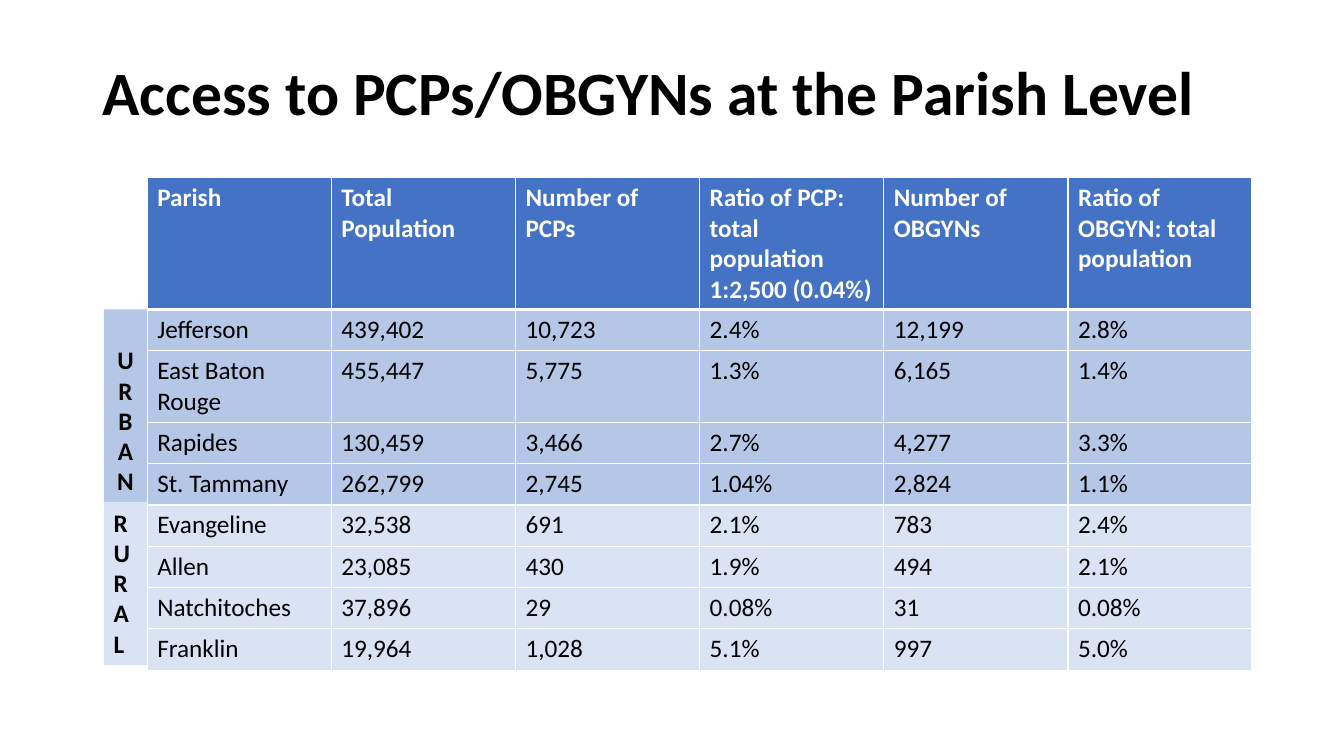
"""Build the slide on access to PCPs and OBGYNs by parish."""
import lxml.etree
import pptx
import pptx.dml.color
import pptx.enum.shapes
import pptx.enum.text
import pptx.oxml.ns
import pptx.util

Inches = pptx.util.Inches
Pt = pptx.util.Pt
URBAN, RURAL, HEADER = "B4C7E7", "DAE3F3", "4472C4"


def color(value):
    return pptx.dml.color.RGBColor.from_string(value)


def set_font(paragraph, size, value, bold):
    font = paragraph.font
    font.name = "Calibri"
    font.size = Pt(size)
    font.bold = bold
    font.color.rgb = color(value)


presentation = pptx.Presentation()
presentation.slide_width = Inches(13.33)
presentation.slide_height = Inches(7.5)
slide = presentation.slides.add_slide(presentation.slide_layouts[6])

title = slide.shapes.add_textbox(Inches(0.92), Inches(0.4), Inches(11.5), Inches(1.09))
title.text_frame.word_wrap = True
title.text_frame.vertical_anchor = pptx.enum.text.MSO_ANCHOR.MIDDLE
paragraph = title.text_frame.paragraphs[0]
paragraph.text = "Access to PCPs/OBGYNs at the Parish Level"
paragraph.line_spacing = 0.9
set_font(paragraph, 44, "000000", True)

rows = [
    ("Parish", "Total Population", "Number of PCPs",
     "Ratio of PCP: total population 1:2,500 (0.04%)",
     "Number of OBGYNs", "Ratio of OBGYN: total population"),
    ("Jefferson", "439,402", "10,723", "2.4%", "12,199", "2.8%"),
    ("East Baton Rouge", "455,447", "5,775", "1.3%", "6,165", "1.4%"),
    ("Rapides", "130,459", "3,466", "2.7%", "4,277", "3.3%"),
    ("St. Tammany", "262,799", "2,745", "1.04%", "2,824", "1.1%"),
    ("Evangeline", "32,538", "691", "2.1%", "783", "2.4%"),
    ("Allen", "23,085", "430", "1.9%", "494", "2.1%"),
    ("Natchitoches", "37,896", "29", "0.08%", "31", "0.08%"),
    ("Franklin", "19,964", "1,028", "5.1%", "997", "5.0%"),
]
row_heights = [1.31, 0.41, 0.71] + [0.41] * 6
row_fills = [HEADER] + [URBAN] * 4 + [RURAL] * 4

table = slide.shapes.add_table(
    len(rows), len(rows[0]), Inches(1.46), Inches(1.76), Inches(10.96), Inches(4.84)
).table
for column in table.columns:
    column.width = Inches(10.96 / len(rows[0]))
for row_index, values in enumerate(rows):
    table.rows[row_index].height = Inches(row_heights[row_index])
    is_header = row_index == 0
    border_widths = {
        "a:lnL": 1,
        "a:lnR": 1,
        "a:lnT": 3 if row_index == 1 else 1,
        "a:lnB": 3 if is_header else 1,
    }
    for column_index, value in enumerate(values):
        cell = table.cell(row_index, column_index)
        cell.text = value
        set_font(cell.text_frame.paragraphs[0], 18,
                 "FFFFFF" if is_header else "000000", is_header)
        cell.fill.solid()
        cell.fill.fore_color.rgb = color(row_fills[row_index])
        properties = cell._tc.get_or_add_tcPr()
        for position, (tag, width) in enumerate(border_widths.items()):
            line = lxml.etree.Element(pptx.oxml.ns.qn(tag), w=str(Pt(width)))
            fill = lxml.etree.SubElement(line, pptx.oxml.ns.qn("a:solidFill"))
            lxml.etree.SubElement(fill, pptx.oxml.ns.qn("a:srgbClr"), val="FFFFFF")
            properties.insert(position, line)

alignments = pptx.enum.text.PP_ALIGN
for word, top, height, fill, alignment, inset in [
    ("URBAN", 3.07, 1.92, URBAN, alignments.CENTER, 0.35),
    ("RURAL", 4.98, 1.62, RURAL, alignments.LEFT, 0.05),
]:
    label = slide.shapes.add_shape(
        pptx.enum.shapes.MSO_SHAPE.RECTANGLE,
        Inches(1.03), Inches(top), Inches(0.43), Inches(height))
    label.shadow.inherit = False
    label.fill.solid()
    label.fill.fore_color.rgb = color(fill)
    label.line.fill.background()
    frame = label.text_frame
    frame.word_wrap = True
    frame.vertical_anchor = pptx.enum.text.MSO_ANCHOR.TOP
    frame.margin_top = Inches(inset)
    frame.text = "\n".join(word)
    for paragraph in frame.paragraphs:
        paragraph.alignment = alignment
        set_font(paragraph, 18, "000000", True)

presentation.save("out.pptx")
